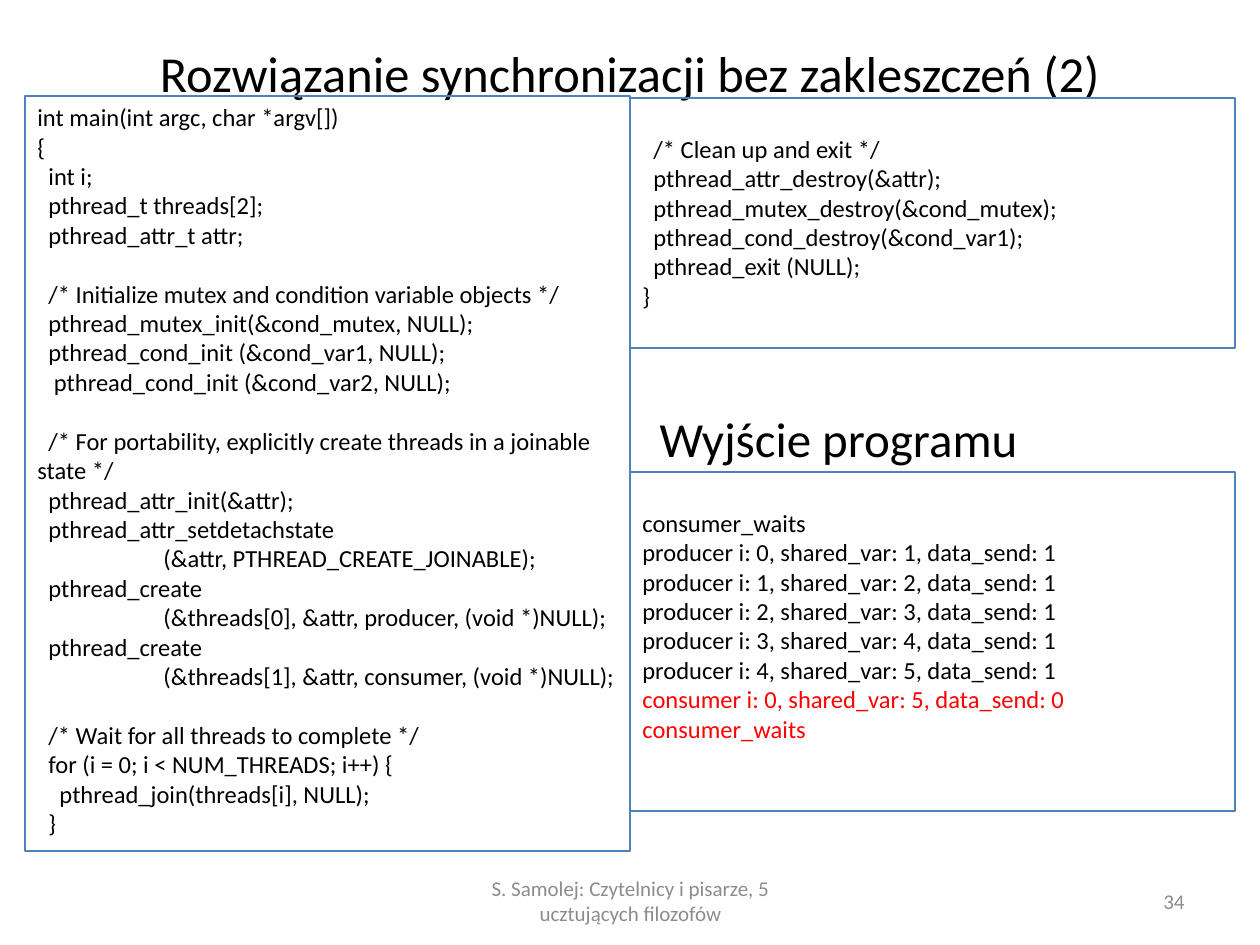
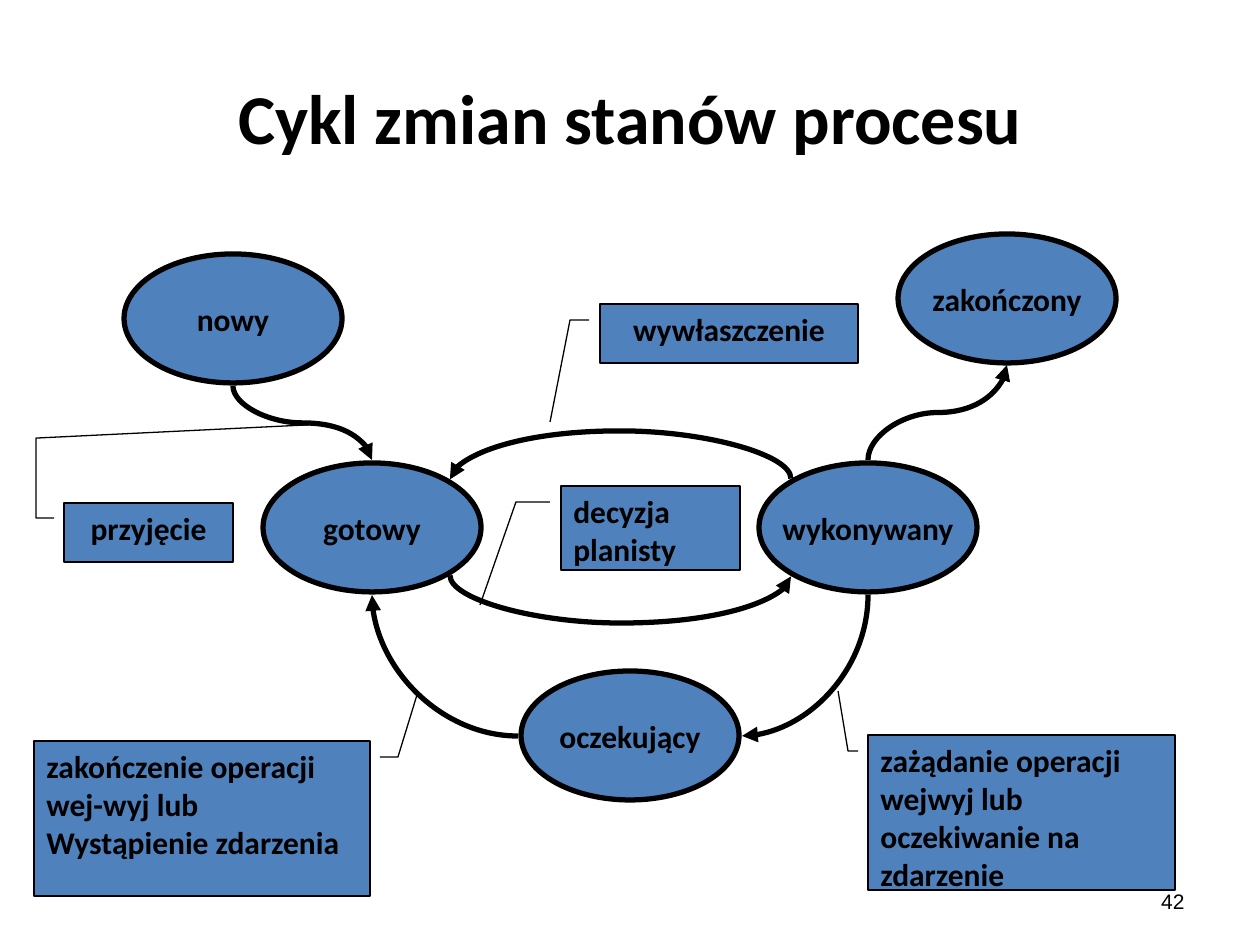
from lxml.etree import SubElement
from pptx import Presentation
from pptx.dml.color import RGBColor
from pptx.enum.shapes import MSO_CONNECTOR, MSO_SHAPE as Preset
from pptx.enum.text import MSO_ANCHOR as Anchor, MSO_AUTO_SIZE, PP_ALIGN as Align
from pptx.oxml.ns import qn
from pptx.util import Pt

EMU_PER_PX = 914400 / 126
TITLE_ONLY = 5
FONT = "Calibri"
BLACK = RGBColor(0, 0, 0)
BLUE = RGBColor(0x4F, 0x81, 0xBD)
GRAY = RGBColor(0x8C, 0x8C, 0x8C)
RED = RGBColor(0xFF, 0, 0)
CODE_SIZE = 14
CODE_LINE_PT = 16.8
CODE_SPACE_PT = 3.16
OVAL_SIZE = (218, 129)

MAIN_CODE = """int main(int argc, char *argv[])
{
  int i;
  pthread_t threads[2];
  pthread_attr_t attr;

  /* Initialize mutex and condition variable objects */
  pthread_mutex_init(&cond_mutex, NULL);
  pthread_cond_init (&cond_var1, NULL);
   pthread_cond_init (&cond_var2, NULL);

  /* For portability, explicitly create threads in a joinable state */
  pthread_attr_init(&attr);
  pthread_attr_setdetachstate
\t(&attr, PTHREAD_CREATE_JOINABLE);
  pthread_create
\t(&threads[0], &attr, producer, (void *)NULL);
  pthread_create
\t(&threads[1], &attr, consumer, (void *)NULL);

  /* Wait for all threads to complete */
  for (i = 0; i < NUM_THREADS; i++) {
    pthread_join(threads[i], NULL);
  }"""

CLEANUP_CODE = """
  /* Clean up and exit */
  pthread_attr_destroy(&attr);
  pthread_mutex_destroy(&cond_mutex);
  pthread_cond_destroy(&cond_var1);
  pthread_exit (NULL);
}"""

PROGRAM_OUTPUT = "\n".join(
    ["", "consumer_waits"]
    + [f"producer i: {i}, shared_var: {i + 1}, data_send: 1" for i in range(5)]
    + ["consumer i: 0, shared_var: 5, data_send: 0", "consumer_waits"]
)

STATES = [
    ("nowy", 124, 254),
    ("gotowy", 263, 463),
    ("oczekujący", 521, 671),
    ("wykonywany", 759, 463),
    ("zakończony", 898, 234),
]

TRANSITIONS = [
    ((233, 386), (372, 460), 270, "H", 0.5),
    ((450, 576), (791, 576), 270, "H", 48),
    ((791, 479), (450, 479), 270, "HV", -48),
    ((868, 595), (742, 736), 90, "", None),
    ((518, 736), (372, 595), 180, "", None),
    ((868, 460), (1007, 365), 270, "", 0.5),
]

CALLOUTS = [
    ("przyjęcie", (64, 503, 169, 59), Align.CENTER,
     [(54, 518), (36, 518), (36, 438), (325, 424)]),
    ("zażądanie operacji wejwyj lub oczekiwanie na zdarzenie",
     (868, 735, 307, 155), Align.LEFT, [(858, 751), (848, 751), (838, 691)]),
    ("zakończenie operacji wej-wyj lub\nWystąpienie zdarzenia",
     (34, 741, 336, 155), Align.LEFT, [(380, 757), (398, 757), (417, 695)]),
    ("decyzja\nplanisty", (561, 486, 179, 84), Align.LEFT,
     [(550, 502), (516, 502), (480, 605)]),
    ("wywłaszczenie", (600, 304, 258, 59), Align.CENTER,
     [(589, 320), (570, 320), (550, 422)]),
]


def px(value):
    """Turn pixels into EMU."""
    return round(value * EMU_PER_PX)


def write_text(shape, text, size, color=BLACK, align=Align.LEFT,
               anchor=Anchor.MIDDLE, bold=False, font=FONT, wrap=True):
    """Fill a shape with uniformly formatted text."""
    frame = shape.text_frame
    frame.text = text
    frame.word_wrap = wrap
    frame.auto_size = MSO_AUTO_SIZE.NONE
    frame.vertical_anchor = anchor
    for paragraph in frame.paragraphs:
        paragraph.alignment = align
        for run in paragraph.runs:
            run.font.name = font
            run.font.size = Pt(size)
            run.font.bold = bold
            run.font.color.rgb = color


def add_titled_slide(presentation, title, height, size, bold=False):
    """Add a title-only slide and format its title."""
    slide = presentation.slides.add_slide(presentation.slide_layouts[TITLE_ONLY])
    shape = slide.shapes.title
    shape.left, shape.top, shape.width, shape.height = map(px, (63, 38, 1134, height))
    write_text(shape, title, size, align=Align.CENTER, bold=bold)
    return slide


def add_label(slide, text, box, size, **style):
    """Add a plain text box."""
    write_text(slide.shapes.add_textbox(*map(px, box)), text, size, **style)


def add_page_number(slide, number, **style):
    """Add the page number at the lower right."""
    add_label(slide, str(number), (903, 876, 294, 50), 12, align=Align.RIGHT, **style)


def add_outlined_shape(slide, preset, box, line_color, line_width, fill=None):
    """Add a preset shape with an outline and an optional fill."""
    shape = slide.shapes.add_shape(preset, *map(px, box))
    shape.shadow.inherit = False
    shape.line.color.rgb = line_color
    shape.line.width = Pt(line_width)
    if fill is None:
        shape.fill.background()
    else:
        shape.fill.solid()
        shape.fill.fore_color.rgb = fill
    return shape


def add_code_box(slide, code, box, red_lines=0):
    """Add framed code, turning blank lines and leading blanks into spacing."""
    shape = add_outlined_shape(slide, Preset.RECTANGLE, box, BLUE, 0.75)
    lines = code.split("\n")
    if not lines[0]:
        lines = lines[1:]
        shape.text_frame.margin_top += Pt(CODE_LINE_PT)
    shown = [line for line in lines if line]
    write_text(shape, "\n".join(line.strip() for line in shown), CODE_SIZE,
               anchor=Anchor.TOP)
    paragraphs = shape.text_frame.paragraphs
    for line, paragraph in zip(shown, paragraphs):
        spaces = len(line) - len(line.lstrip(" "))
        indent = px(126) if line.startswith("\t") else Pt(spaces * CODE_SPACE_PT)
        properties = paragraph._p.get_or_add_pPr()
        properties.set("marL", "0")
        properties.set("indent", str(int(indent)))
        position = lines.index(line)
        if position and not lines[position - 1]:
            paragraph.space_before = Pt(CODE_LINE_PT)
    for paragraph in paragraphs[len(paragraphs) - red_lines:]:
        paragraph.runs[0].font.color.rgb = RED


def add_state(slide, name, left, top):
    """Add the oval of a process state."""
    shape = add_outlined_shape(slide, Preset.OVAL, (left, top, *OVAL_SIZE), BLACK, 3, BLUE)
    write_text(shape, name, 18, align=Align.CENTER, bold=True, wrap=False)


def add_transition(slide, start, end, rotation, flips, bend):
    """Add a curved arrow; without a bend it is a quarter turn."""
    width, height = (max(abs(b - a), 1) for a, b in zip(start, end))
    center_x, center_y = ((a + b) / 2 for a, b in zip(start, end))
    if rotation in (90, 270):
        width, height = height, width
    left, top = center_x - width / 2, center_y - height / 2
    connector = slide.shapes.add_connector(
        MSO_CONNECTOR.CURVE, *map(px, (left, top, left + width, top + height)))
    connector.line.color.rgb = BLACK
    connector.line.width = Pt(3)
    properties = connector._element.spPr
    transform = properties.find(qn("a:xfrm"))
    transform.set("rot", str(rotation * 60000))
    for flip in flips:
        transform.set(f"flip{flip}", "1")
    geometry = properties.find(qn("a:prstGeom"))
    if bend is None:
        geometry.set("prst", "curvedConnector2")
    else:
        guides = geometry.find(qn("a:avLst"))
        if guides is None:
            guides = SubElement(geometry, qn("a:avLst"))
        SubElement(guides, qn("a:gd"), name="adj1", fmla=f"val {round(bend * 100000)}")
    SubElement(properties.find(qn("a:ln")), qn("a:tailEnd"), type="triangle")
    SubElement(properties, qn("a:effectLst"))


def add_callout(slide, text, box, align, leader):
    """Add a callout whose leader runs through the given points."""
    preset = Preset.LINE_CALLOUT_3 if len(leader) == 4 else Preset.LINE_CALLOUT_2
    shape = add_outlined_shape(slide, preset, box, BLACK, 0.75, BLUE)
    left, top, width, height = box
    for i, (x, y) in enumerate(leader):
        shape.adjustments[2 * i] = (y - top) / height
        shape.adjustments[2 * i + 1] = (x - left) / width
    write_text(shape, text, 18, align=align, anchor=Anchor.TOP, bold=True)


def build_synchronization_slide(presentation):
    """Build the slide with the threads program and its output."""
    slide = add_titled_slide(
        presentation, "Rozwiązanie synchronizacji bez zakleszczeń (2)", 68, 28.8)
    add_label(slide, "S. Samolej: Czytelnicy i pisarze, 5 ucztujących filozofów",
              (431, 876, 399, 50), 12, color=GRAY, align=Align.CENTER)
    add_page_number(slide, 34, color=GRAY)
    add_code_box(slide, MAIN_CODE, (25, 96, 605, 755))
    add_code_box(slide, CLEANUP_CODE, (630, 98, 605, 250))
    add_code_box(slide, PROGRAM_OUTPUT, (630, 472, 605, 339), red_lines=2)
    add_label(slide, "Wyjście programu", (630, 403, 417, 69), 28, align=Align.CENTER)


def build_process_slide(presentation):
    """Build the slide with the process state cycle."""
    slide = add_titled_slide(presentation, "Cykl zmian stanów procesu", 158, 40, bold=True)
    add_page_number(slide, 42, font="Arial")
    for state in STATES:
        add_state(slide, *state)
    for transition in TRANSITIONS:
        add_transition(slide, *transition)
    for callout in CALLOUTS:
        add_callout(slide, *callout)


def main():
    """Build and save the presentation."""
    presentation = Presentation()
    presentation.slide_width, presentation.slide_height = px(1260), px(945)
    build_synchronization_slide(presentation)
    build_process_slide(presentation)
    presentation.save("out.pptx")


if __name__ == "__main__":
    main()
